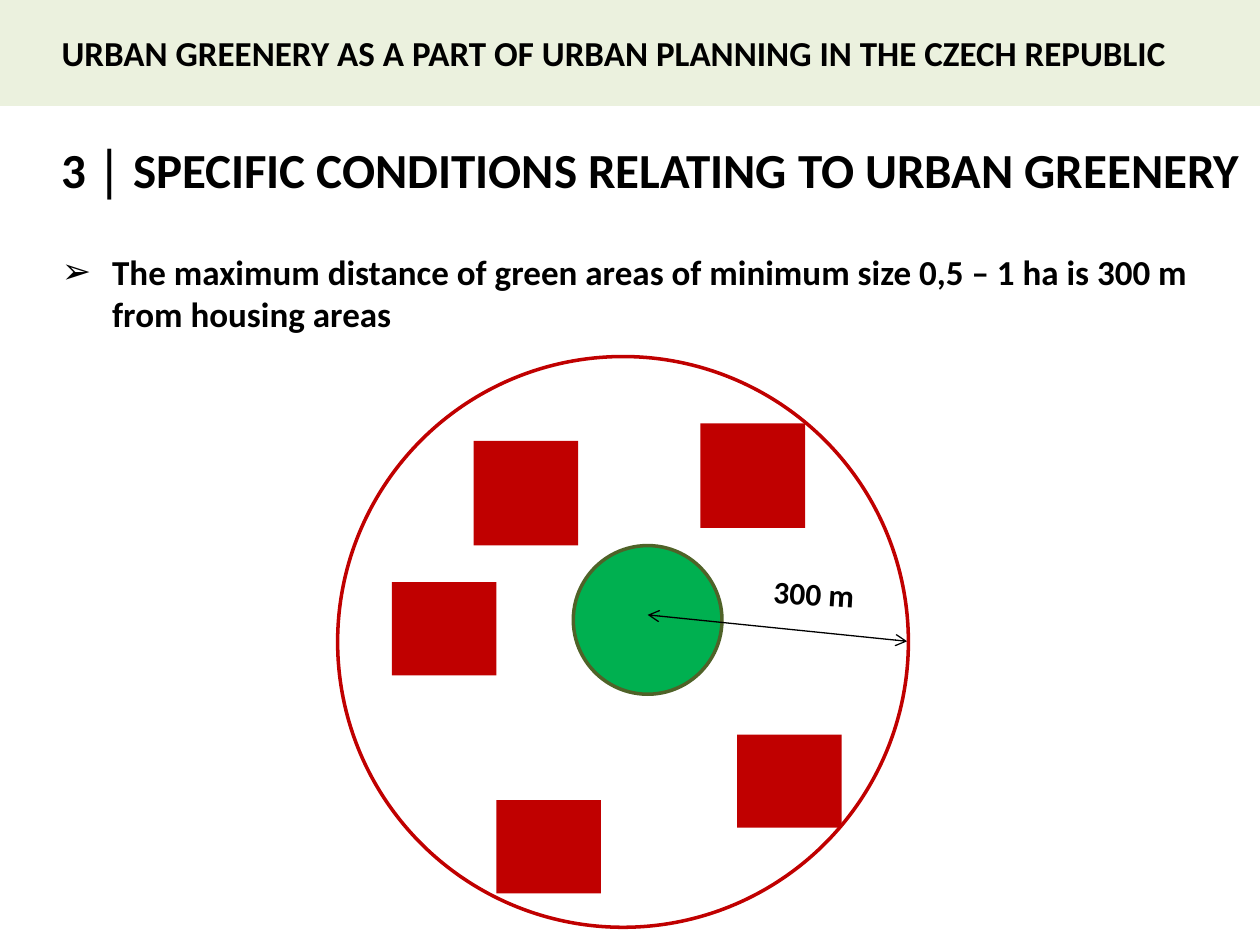
from dataclasses import dataclass

from lxml.etree import SubElement
from pptx import Presentation
from pptx.dml.color import RGBColor
from pptx.enum.shapes import MSO_CONNECTOR, MSO_SHAPE
from pptx.enum.text import MSO_ANCHOR, MSO_AUTO_SIZE, PP_ALIGN
from pptx.oxml.ns import qn
from pptx.util import Inches, Pt


@dataclass(frozen=True)
class Theme:
    font: str = "Calibri"
    text: str = "000000"
    band: str = "EBF1DE"
    housing: str = "C00000"
    green: str = "00B050"
    green_edge: str = "4F6228"
    title_size: int = 28
    body_size: int = 20
    label_size: int = 18
    outline: float = 2
    arrow: float = 0.75


THEME = Theme()
HOUSES = [
    (5.56, 3.36, 0.83),
    (3.76, 3.5, 0.83),
    (3.94, 6.35, 0.74),
    (5.85, 5.83, 0.74),
    (3.11, 4.62, 0.74),
]
HOUSE_WIDTH = 0.83


def apply(target, values):
    for attribute, value in values.items():
        setattr(target, attribute, value)


def box(left, top, width, height):
    return dict(zip(("left", "top", "width", "height"),
                    map(Inches, (left, top, width, height))))


def write(holder, text, size, indent=None, bullet=None, **frame_format):
    frame = holder.text_frame
    apply(frame, {"word_wrap": True, "auto_size": MSO_AUTO_SIZE.NONE,
                  "vertical_anchor": MSO_ANCHOR.TOP, **frame_format})
    paragraph = frame.paragraphs[0]
    paragraph.text = text
    apply(paragraph, {"alignment": PP_ALIGN.LEFT, "space_before": Pt(0)})
    properties = paragraph._p.get_or_add_pPr()
    if indent:
        margin, first_line = indent
        properties.set("marL", str(Inches(margin)))
        properties.set("indent", str(Inches(first_line)))
    if bullet:
        paragraph.space_after = Pt(6)
        SubElement(properties, qn("a:buFont")).set("typeface", "Arial")
        SubElement(properties, qn("a:buChar")).set("char", bullet)
    font = paragraph.runs[0].font
    apply(font, {"name": THEME.font, "size": Pt(size), "bold": True})
    font.color.rgb = RGBColor.from_string(THEME.text)


def add_area(slide, kind, place, fill=None, edge=None):
    area = slide.shapes.add_shape(kind, **box(*place))
    area.shadow.inherit = False
    if fill:
        area.fill.solid()
        area.fill.fore_color.rgb = RGBColor.from_string(fill)
    else:
        area.fill.background()
    if edge:
        area.line.color.rgb = RGBColor.from_string(edge)
        area.line.width = Pt(THEME.outline)
    else:
        area.line.fill.background()
    return area


def add_distance_arrow(slide, start, end):
    arrow = slide.shapes.add_connector(
        MSO_CONNECTOR.STRAIGHT, *map(Inches, start + end))
    arrow.line.color.rgb = RGBColor.from_string(THEME.text)
    arrow.line.width = Pt(THEME.arrow)
    outline = arrow.line._get_or_add_ln()
    for tip in ("a:headEnd", "a:tailEnd"):
        SubElement(outline, qn(tip)).set("type", "arrow")
    SubElement(arrow._element.spPr, qn("a:effectLst"))


def add_label(slide, text, place, rotation):
    label = slide.shapes.add_textbox(**box(*place))
    label.rotation = rotation
    write(label, text, THEME.label_size, margin_left=Inches(0.16))


def add_diagram(slide):
    for left, top, height in HOUSES:
        add_area(slide, MSO_SHAPE.RECTANGLE,
                 (left, top, HOUSE_WIDTH, height), THEME.housing)
    add_area(slide, MSO_SHAPE.OVAL, (4.55, 4.33, 1.18, 1.18),
             THEME.green, THEME.green_edge)
    add_distance_arrow(slide, (5.14, 4.88), (7.2, 5.09))
    add_label(slide, "300 m", (5.98, 4.51, 1.04, 0.4), 3.5)
    add_area(slide, MSO_SHAPE.OVAL, (2.68, 2.83, 4.53, 4.53),
             edge=THEME.housing)


def main():
    deck = Presentation()
    apply(deck, {"slide_width": Inches(10), "slide_height": Inches(7.5)})
    slide = deck.slides.add_slide(deck.slide_layouts[1])

    header = add_area(slide, MSO_SHAPE.RECTANGLE, (0, 0, 10, 0.84), THEME.band)
    write(header, "URBAN GREENERY AS A PART OF URBAN PLANNING IN THE CZECH REPUBLIC",
          THEME.body_size, indent=(0.39, 0), margin_top=Inches(0.25))

    title = slide.shapes.title
    apply(title, box(0, 0.98, 10, 0.72))
    write(title, "3 │ SPECIFIC CONDITIONS RELATING TO URBAN GREENERY",
          THEME.title_size, indent=(0.79, -0.4),
          vertical_anchor=MSO_ANCHOR.MIDDLE)

    body = slide.placeholders[1]
    apply(body, box(0, 1.94, 10, 4.81))
    write(body, "The maximum distance of green areas of minimum size 0,5 – 1 ha "
          "is 300 m from housing areas",
          THEME.body_size, indent=(0.79, -0.4), bullet="➢")

    add_diagram(slide)
    deck.save("out.pptx")


if __name__ == "__main__":
    main()
